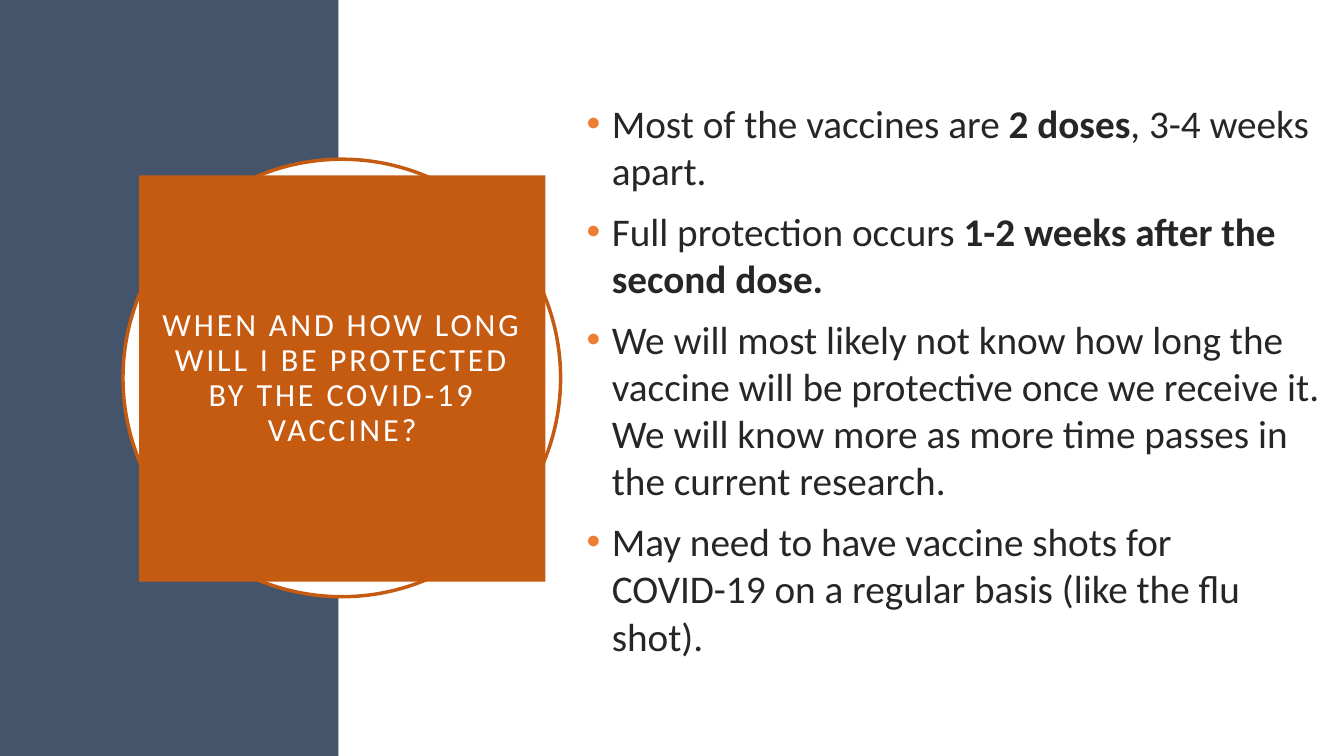
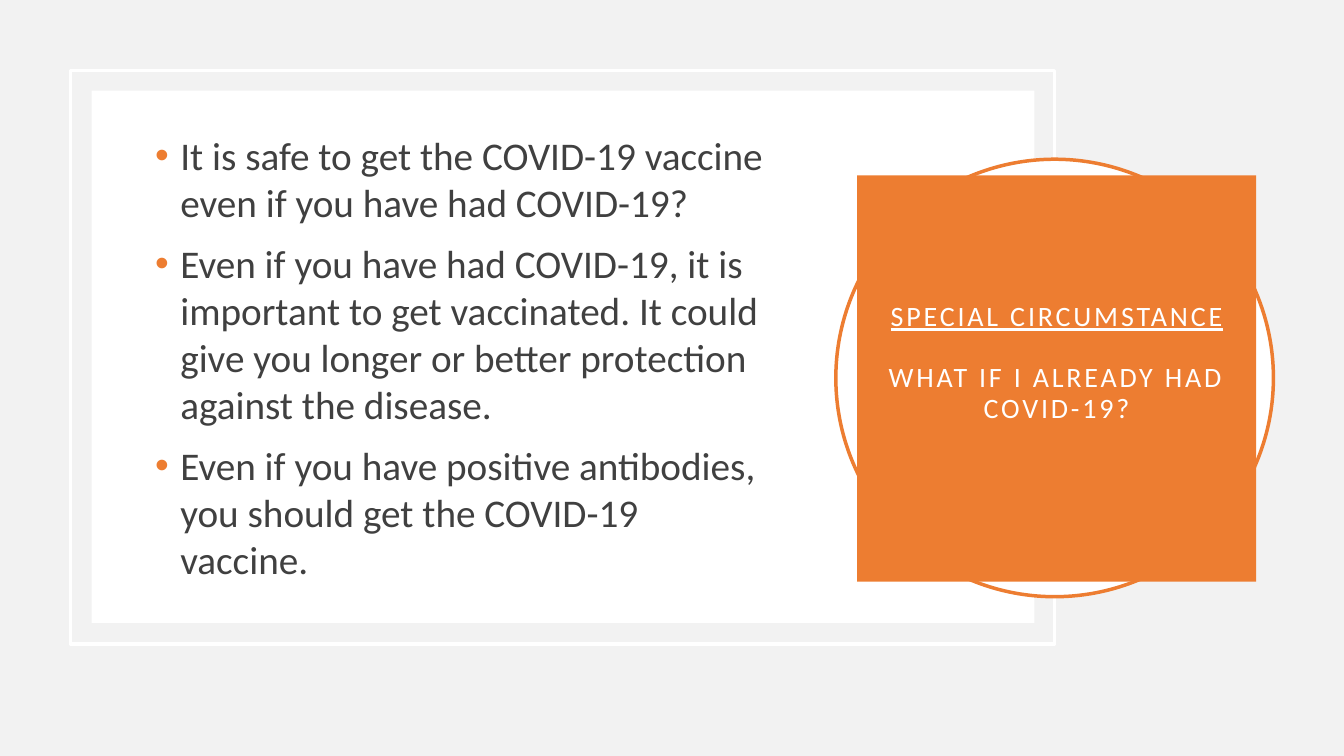
"""Build two slides on protection by the COVID-19 vaccine."""
from dataclasses import dataclass

from lxml import etree
from pptx import Presentation
from pptx.dml.color import RGBColor
from pptx.enum import shapes as es, text as et
from pptx.oxml import ns
from pptx.util import Inches, Pt


@dataclass(frozen=True)
class Theme:
    """Colours, type and line sizes of the deck."""
    font: str = "Calibri"
    white: str = "FFFFFF"
    pale: str = "F2F2F2"
    navy: str = "44546A"
    rust: str = "C55A11"
    orange: str = "ED7D31"
    ink: str = "262626"
    grey: str = "404040"
    body: int = 28
    head: int = 23
    small: int = 20
    line: float = 2.5
    track: int = 200


T = Theme()
RECT = es.MSO_SHAPE.RECTANGLE
OVAL = es.MSO_SHAPE.OVAL
DOSES = [
    "Most of the vaccines are **2 doses**, 3-4 weeks apart.",
    "Full protection occurs **1-2 weeks after the second dose.**",
    "We will most likely not know how long the vaccine will be protective "
    "once we receive it. We will know more as more time passes in the "
    "current research.",
    "May need to have vaccine shots for COVID-19 on a regular basis "
    "(like the flu shot).",
]
CASES = [
    "It is safe to get the COVID-19 vaccine even if you have had COVID-19?",
    "Even if you have had COVID-19, it is important to get vaccinated. "
    "It could give you longer or better protection against the disease.",
    "Even if you have positive antibodies, you should get the COVID-19 "
    "vaccine.",
]


def paint(fill, color):
    """Give a fill one plain colour."""
    fill.solid()
    fill.fore_color.rgb = RGBColor.from_string(color)


def place(shape, box):
    """Move and size a shape."""
    shape.left, shape.top, shape.width, shape.height = map(Inches, box)


def draw(slide, kind, box, fill=None, line=None):
    """Add a preset shape with an optional fill and outline."""
    shape = slide.shapes.add_shape(kind, *map(Inches, box))
    shape.shadow.inherit = False
    if fill:
        paint(shape.fill, fill)
    else:
        shape.fill.background()
    if line:
        paint(shape.line.fill, line)
        shape.line.width = Pt(T.line)
    else:
        shape.line.fill.background()


def bullet(para, color):
    """Hang a coloured bullet on a paragraph."""
    props = para._p.get_or_add_pPr()
    props.set("marL", str(Inches(0.25)))
    props.set("indent", str(-Inches(0.25)))
    tint = etree.SubElement(props, ns.qn("a:buClr"))
    etree.SubElement(tint, ns.qn("a:srgbClr"), val=color)
    etree.SubElement(props, ns.qn("a:buFont"), typeface="Arial")
    etree.SubElement(props, ns.qn("a:buChar"), char="•")


def write(para, words, size, color, align=None, lead=1.0, before=0,
          track=0, under=False, mark=None):
    """Write a paragraph in which **marked** words are bold."""
    para.alignment = align
    para.line_spacing = lead
    para.space_before = Pt(before)
    if mark:
        bullet(para, mark)
    for i, part in enumerate(words.split("**")):
        if not part:
            continue
        run = para.add_run()
        run.text = part
        font = run.font
        font.name, font.size = T.font, Pt(size)
        font.bold, font.underline = i % 2 == 1, under
        font.color.rgb = RGBColor.from_string(color)
        if track:
            run._r.get_or_add_rPr().set("spc", str(track))


def paras(frame, count):
    """Yield the paragraphs of a frame, adding those it lacks."""
    yield frame.paragraphs[0]
    for _ in range(count - 1):
        yield frame.add_paragraph()


def setup(frame):
    """Wrap and centre a text frame vertically."""
    frame.word_wrap = True
    frame.auto_size = et.MSO_AUTO_SIZE.NONE
    frame.vertical_anchor = et.MSO_ANCHOR.MIDDLE


def points(slide, box, items, color):
    """Add a bulleted list."""
    frame = slide.shapes.add_textbox(*map(Inches, box)).text_frame
    setup(frame)
    for para, item in zip(paras(frame, len(items)), items):
        write(para, item, T.body, color, before=10, mark=T.orange)


def badge(slide, left, box, color, size, lines, foot=0.2):
    """Set the title on a coloured block over a ring."""
    draw(slide, OVAL, (left, 1.58, 4.34, 4.34), T.white, color)
    title = slide.shapes.title
    slide.shapes._spTree.append(title._element)
    place(title, box)
    paint(title.fill, color)
    frame = title.text_frame
    setup(frame)
    frame.margin_left = frame.margin_right = frame.margin_top = Inches(0.2)
    frame.margin_bottom = Inches(foot)
    for para, (words, form) in zip(paras(frame, len(lines)), lines):
        write(para, words, size, T.white, align=et.PP_ALIGN.CENTER,
              lead=0.9, track=T.track, **form)


def start(deck, color):
    """Add a title-only slide on a plain background."""
    slide = deck.slides.add_slide(deck.slide_layouts[5])
    paint(slide.background.fill, color)
    return slide


def timing(deck):
    """Build the slide on when protection starts and how long it lasts."""
    slide = start(deck, T.white)
    draw(slide, RECT, (0, 0, 3.36, 7.5), T.navy)
    draw(slide, RECT, (3.36, 0, 9.97, 7.5), T.white)
    badge(slide, 1.22, (1.38, 1.74, 4.03, 4.03), T.rust, T.head,
          [("WHEN AND HOW LONG WILL I BE PROTECTED BY THE COVID-19 VACCINE?",
            {})])
    points(slide, (5.72, 0.25, 7.61, 7.02), DOSES, T.ink)


def special(deck):
    """Build the slide on people who already had the disease."""
    slide = start(deck, T.pale)
    draw(slide, RECT, (0.7, 0.7, 9.76, 5.69), line=T.white)
    draw(slide, RECT, (0.91, 0.9, 9.35, 5.28), T.white)
    points(slide, (1.44, 1.4, 6.25, 4.28), CASES, T.grey)
    badge(slide, 8.29, (8.5, 1.74, 3.96, 4.03), T.orange, T.small,
          [("SPECIAL CIRCUMSTANCE", {"under": True}),
           ("WHAT IF I ALREADY HAD COVID-19?", {"before": 22})], foot=0.5)


def main():
    """Build and save the deck."""
    deck = Presentation()
    deck.slide_width, deck.slide_height = Inches(13.33), Inches(7.5)
    timing(deck)
    special(deck)
    deck.save("out.pptx")


if __name__ == "__main__":
    main()
